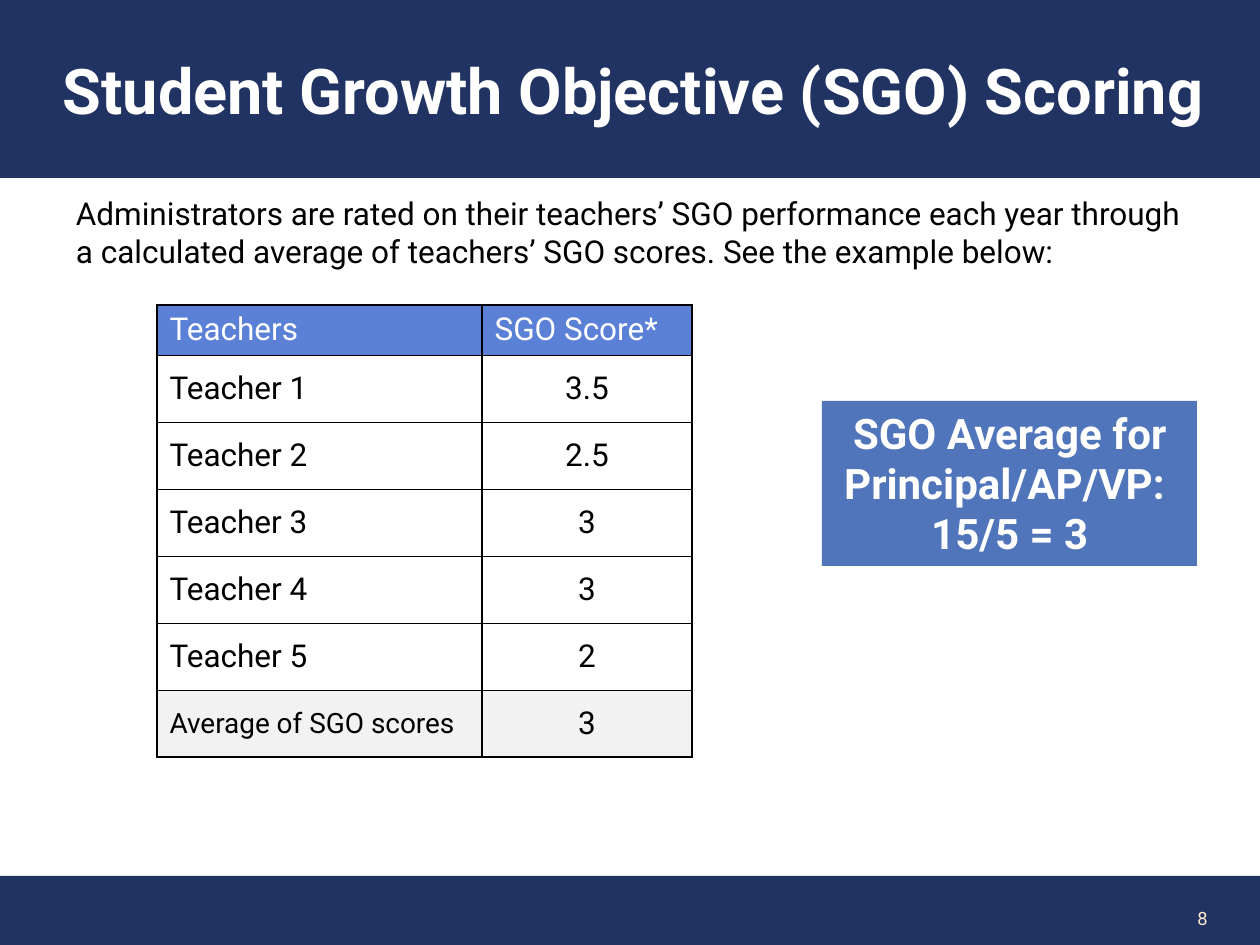
from lxml import etree
from pptx import Presentation
from pptx import util as u
from pptx.dml.color import RGBColor
from pptx.enum import shapes, text
from pptx.oxml import ns

COLORS = {"navy": "213363", "header": "5B81D7", "callout": "5075BB", "total": "F2F2F2",
          "white": "FFFFFF", "black": "000000", "cream": "FEEBD0"}
LEFT, CENTER, RIGHT = text.PP_ALIGN.LEFT, text.PP_ALIGN.CENTER, text.PP_ALIGN.RIGHT
TOP, MIDDLE = text.MSO_ANCHOR.TOP, text.MSO_ANCHOR.MIDDLE


def px(length):
    return u.Emu(round(length * 914400 / 126))


class SlideBuilder:
    font = "Roboto"

    def __init__(self, slide):
        self.slide = slide

    def set_words(self, frame, words, size, color, align=LEFT, bold=False):
        paragraph = frame.paragraphs[0]
        paragraph.text = words
        paragraph.alignment = align
        formats = {"name": self.font, "size": u.Pt(size), "bold": bold}
        for run in paragraph.runs:
            for key, value in formats.items():
                setattr(run.font, key, value)
            run.font.color.rgb = RGBColor.from_string(COLORS[color])

    def paint(self, item, color):
        item.fill.solid()
        item.fill.fore_color.rgb = RGBColor.from_string(COLORS[color])

    def band(self, box, color):
        band = self.slide.shapes.add_shape(shapes.MSO_SHAPE.RECTANGLE, *map(px, box))
        band.shadow.inherit = False
        self.paint(band, color)
        band.line.fill.background()
        return band.text_frame

    def label(self, box):
        return self.slide.shapes.add_textbox(*map(px, box)).text_frame

    def caption(self, frame, words, size, color, anchor=TOP, inset=13, **style):
        formats = {"word_wrap": True, "vertical_anchor": anchor, "margin_left": px(inset)}
        for key, value in formats.items():
            setattr(frame, key, value)
        self.set_words(frame, words, size, color, **style)

    def border(self, cell):
        properties = cell._tc.get_or_add_tcPr()
        for side in ("a:lnL", "a:lnR", "a:lnT", "a:lnB"):
            line = etree.SubElement(properties, ns.qn(side), w=str(u.Pt(1)))
            solid = etree.SubElement(line, ns.qn("a:solidFill"))
            etree.SubElement(solid, ns.qn("a:srgbClr"), val=COLORS["black"])

    def table(self, left, top, widths, heights, rows):
        frame = self.slide.shapes.add_table(len(rows), len(widths), px(left), px(top),
                                            px(sum(widths)), px(sum(heights)))
        table = frame.table
        table.first_row = table.horz_banding = False
        for column, width in zip(table.columns, widths):
            column.width = px(width)
        for row, height in zip(table.rows, heights):
            row.height = px(height)
        last = len(rows) - 1
        for r, row in enumerate(rows):
            for c, words in enumerate(row):
                cell = table.cell(r, c)
                cell.vertical_anchor = MIDDLE
                self.border(cell)
                if r in (0, last):
                    self.paint(cell, "total" if r else "header")
                else:
                    cell.fill.background()
                self.set_words(cell.text_frame, words, 16 if (r, c) == (last, 0) else 18,
                               "black" if r else "white", CENTER if r and c else LEFT)


def main():
    deck = Presentation()
    deck.slide_width, deck.slide_height = px(1260), px(945)
    page = SlideBuilder(deck.slides.add_slide(deck.slide_layouts[6]))

    # Footer with page number
    page.band((0, 876, 1263, 74), "navy")
    page.caption(page.label((1036, 893, 184, 50)), "8", 10.5, "cream", MIDDLE, align=RIGHT)

    # Title and introduction
    title = page.band((0, 0, 1260, 178), "navy")
    page.caption(title, "Student Growth Objective (SGO) Scoring", 36, "white", MIDDLE,
                 inset=63, bold=True)
    page.caption(page.label((63, 188, 1134, 149)),
                 "Administrators are rated on their teachers’ SGO performance each year through "
                 "a calculated average of teachers’ SGO scores. See the example below:",
                 18, "black")

    # Average callout
    average = page.band((822, 401, 375, 165), "callout")
    page.caption(average, "SGO Average for Principal/AP/VP: \n15/5 = 3", 24, "white",
                 align=CENTER, bold=True)

    # Score table
    scores = ["3.5", "2.5", "3", "3", "2"]
    teachers = [(f"Teacher {n}", score) for n, score in enumerate(scores, 1)]
    rows = [("Teachers", "SGO Score*"), *teachers, ("Average of SGO scores", "3")]
    page.table(157, 305, (325, 210), [50] + [67] * 6, rows)

    deck.save("out.pptx")


if __name__ == "__main__":
    main()
